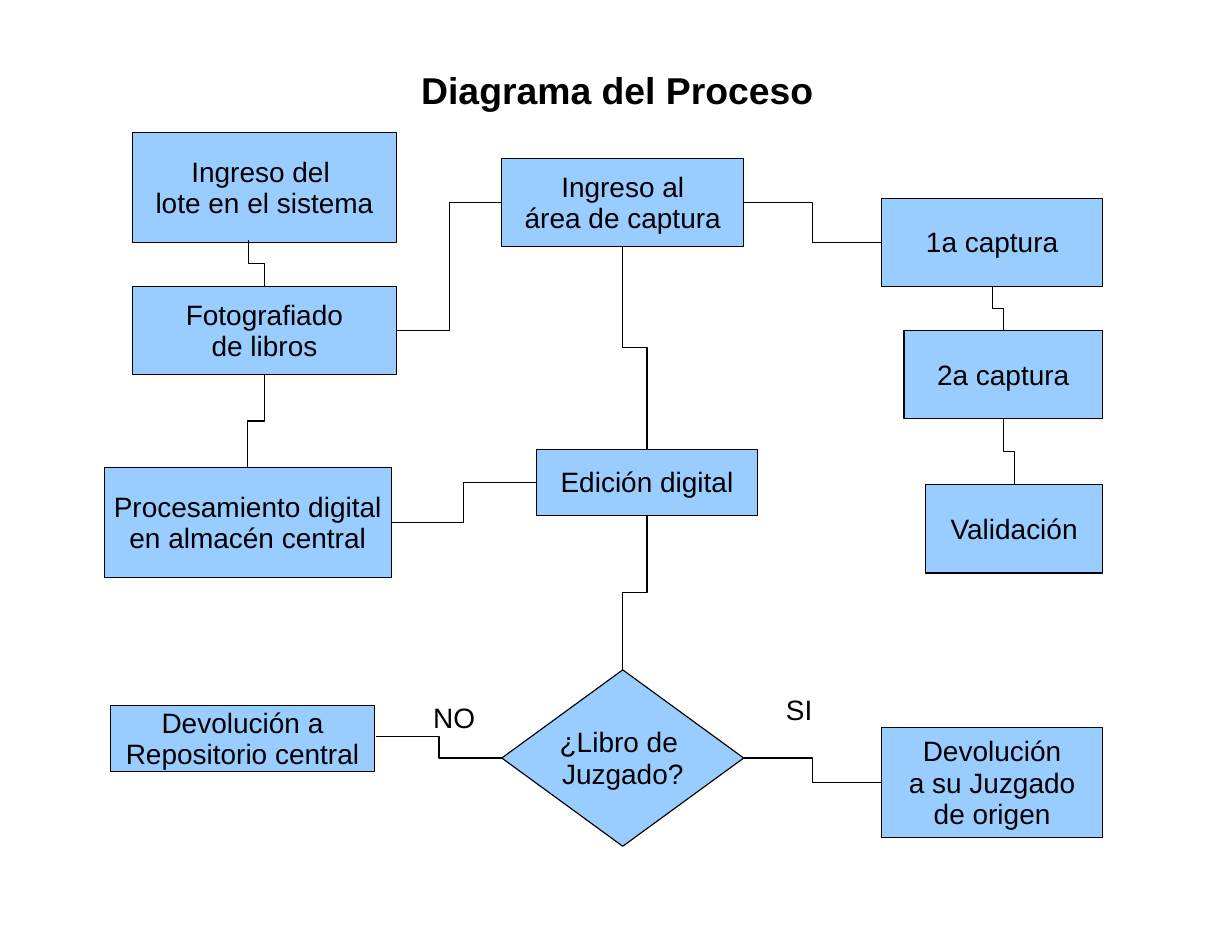
from lxml.etree import SubElement
from pptx import Presentation
from pptx.dml.color import RGBColor
from pptx.enum.shapes import MSO_CONNECTOR as Link, MSO_SHAPE as Kind
from pptx.enum.text import MSO_ANCHOR as Anchor, PP_ALIGN as Align
from pptx.oxml.ns import qn
from pptx.util import Pt

COLORS = {"box": "99CCFF", "ink": "000000"}
LINE_WIDTH = 0.75

# Steps: name -> (left, top, width, height, lines of text)
STEPS = {
    "lote": (85, 85, 170, 70.9, ["Ingreso del ", "lote en el sistema"]),
    "fotos": (85, 184.3, 170, 56.7, ["Fotografiado", "de libros"]),
    "area": (322.6, 101.8, 155.5, 56.7, ["Ingreso al", "área de captura"]),
    "primera": (566.9, 127.5, 141.8, 56.7, ["1a captura"]),
    "segunda": (581.1, 212.6, 127.6, 56.7, ["2a captura"]),
    "validacion": (595.2, 311.7, 113.5, 56.7, ["Validación"]),
    "proceso": (67, 300.4, 184.4, 70.9,
                ["Procesamiento digital", "en almacén central"]),
    "edicion": (344.9, 288.8, 142, 42.5, ["Edición digital"]),
    "decision": (322.6, 430.6, 155.5, 113.4, ["¿Libro de ", "Juzgado?"]),
    "repositorio": (70.9, 453.5, 170, 42.5,
                    ["Devolución a", "Repositorio central"]),
    "juzgado": (566.9, 467.7, 141.7, 70.9,
                ["Devolución", "a su Juzgado", "de origen"]),
}

# Links leave the bottom side ("down") or the right side ("across");
# the last pair moves the start point
LINKS = [
    ("down", "lote", "fotos", (-10.2, -1.8)),
    ("down", "fotos", "proceso", (0, 0)),
    ("down", "area", "edicion", (0, 0)),
    ("down", "edicion", "decision", (0, 0)),
    ("down", "primera", "segunda", (0, 0)),
    ("down", "segunda", "validacion", (0, 0)),
    ("across", "fotos", "area", (0, 0)),
    ("across", "area", "primera", (0, 0)),
    ("across", "proceso", "edicion", (0, 0)),
    ("across", "repositorio", "decision", (1, -1.5)),
    ("across", "decision", "juzgado", (0, 0)),
]

# Labels: left, top, width, height, text, alignment, frame settings, font.
# Branch labels have no right inset, so their letters fit on one line.
BRANCH = {"margin_right": 0}
TITLE = {"word_wrap": True, "margin_top": Pt(3.6)}
LABELS = [
    (271.4, 447.5, 41, 28, "NO", Align.LEFT, BRANCH, {}),
    (498.2, 442.1, 31, 27.4, "SI", Align.LEFT, BRANCH, {}),
    (127.5, 42.5, 538.6, 33.8, "Diagrama del Proceso", Align.CENTER, TITLE,
     {"size": Pt(24), "bold": True}),
]


def color(name):
    return RGBColor.from_string(COLORS[name])


def style_line(line):
    line.color.rgb = color("ink")
    line.width = Pt(LINE_WIDTH)


def write(shape, lines, align, changes, font):
    frame = shape.text_frame
    settings = {"word_wrap": False, "vertical_anchor": Anchor.TOP,
                "margin_left": Pt(7.1), "margin_right": Pt(7.1),
                "margin_top": Pt(5), "margin_bottom": Pt(3.6), **changes}
    for key, value in settings.items():
        setattr(frame, key, value)
    for index, text in enumerate(lines):
        para = frame.add_paragraph() if index else frame.paragraphs[0]
        para.alignment, para.line_spacing = align, 0.93
        span = para.add_run()
        span.text = text
        for key, value in {"name": "Arial", "size": Pt(18), **font}.items():
            setattr(span.font, key, value)
        span.font.color.rgb = color("ink")


def add_link(page, direction, source, target, shift):
    left, top, width, height, _ = STEPS[source]
    to_left, to_top, to_width, to_height, _ = STEPS[target]
    if direction == "across":
        x1, y1 = left + width, top + height / 2
        x2, y2 = to_left, to_top + to_height / 2
    else:
        x1, y1 = left + width / 2, top + height
        x2, y2 = to_left + to_width / 2, to_top
    x1, y1 = x1 + shift[0], y1 + shift[1]
    turn = 0
    if direction == "down":
        # A vertical link is a horizontal elbow turned about its centre
        middle_x, middle_y = (x1 + x2) / 2, (y1 + y2) / 2
        turn, side = (270, 1) if x2 > x1 else (90, -1)
        reach, drop = side * (y2 - y1) / 2, abs(x2 - x1) / 2
        x1, y1 = middle_x + reach, middle_y - drop
        x2, y2 = middle_x - reach, middle_y + drop
    link = page.shapes.add_connector(Link.ELBOW, *map(Pt, (x1, y1, x2, y2)))
    link.rotation = turn
    style_line(link.line)
    SubElement(link._element.spPr, qn("a:effectLst"))


def main():
    deck = Presentation()
    deck.slide_width, deck.slide_height = Pt(792), Pt(612)
    page = deck.slides.add_slide(deck.slide_layouts[6])

    # Steps and decision
    for name, (*place, lines) in STEPS.items():
        kind = (Kind.FLOWCHART_DECISION if name == "decision"
                else Kind.FLOWCHART_PROCESS)
        box = page.shapes.add_shape(kind, *map(Pt, place))
        box.shadow.inherit = False
        box.fill.solid()
        box.fill.fore_color.rgb = color("box")
        style_line(box.line)
        write(box, lines, Align.CENTER, {"vertical_anchor": Anchor.MIDDLE}, {})

    # Links between steps
    for link in LINKS:
        add_link(page, *link)

    # Branch labels and title
    for *place, text, align, changes, font in LABELS:
        label = page.shapes.add_textbox(*map(Pt, place))
        write(label, [text], align, changes, font)

    deck.save("out.pptx")


if __name__ == "__main__":
    main()
